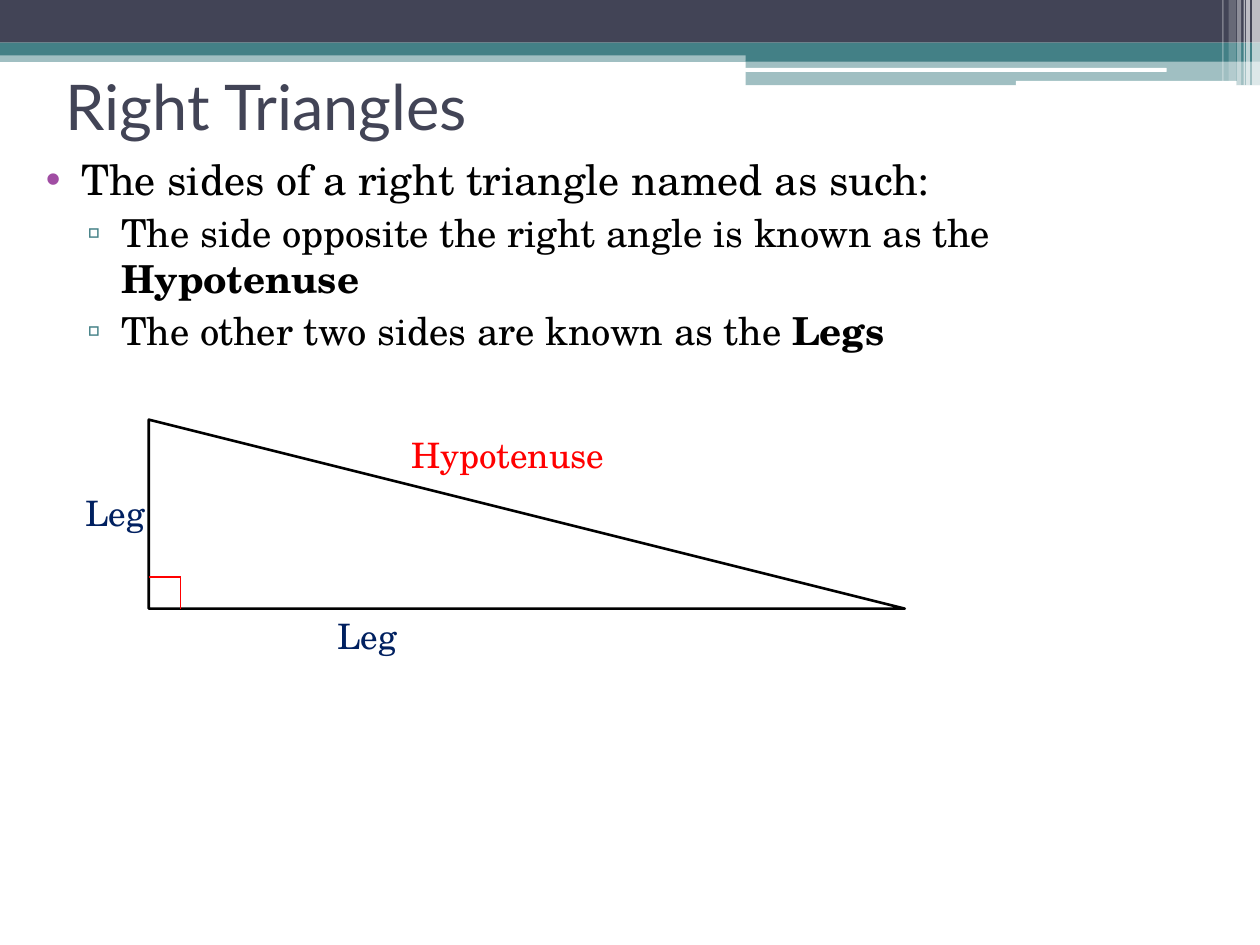
"""Build the Right Triangles slide: banded header, definitions and a labelled diagram."""
from dataclasses import dataclass

from lxml import etree
from pptx import Presentation
from pptx.dml.color import RGBColor
from pptx.enum.shapes import MSO_CONNECTOR, MSO_SHAPE
from pptx.enum.text import MSO_ANCHOR, MSO_AUTO_SIZE, PP_ALIGN
from pptx.oxml.ns import qn
from pptx.util import Cm, Pt

RECT = MSO_SHAPE.RECTANGLE
ROUNDED = MSO_SHAPE.ROUNDED_RECTANGLE
RIGHT_TRIANGLE = MSO_SHAPE.RIGHT_TRIANGLE
STRAIGHT = MSO_CONNECTOR.STRAIGHT
LEFT = PP_ALIGN.LEFT
MIDDLE, TOP = MSO_ANCHOR.MIDDLE, MSO_ANCHOR.TOP
NO_FIT, GROW = MSO_AUTO_SIZE.NONE, MSO_AUTO_SIZE.SHAPE_TO_FIT_TEXT

COLORS = {
    "slate": "424456", "teal": "438086", "white": "FFFFFF", "black": "000000",
    "purple": "A04DA3", "red": "FF0000", "navy": "002060",
}
TITLE_FONT, BODY_FONT = "Lato", "TeX Gyre Schola"


@dataclass
class Band:
    left: float
    top: float
    width: float
    height: float
    color: str
    opacity: int = 100
    preset: int = RECT


@dataclass
class Bullet:
    text: str
    bold_term: str
    level: int
    size: int
    margin: float
    indent: float
    mark: str
    mark_color: str


@dataclass
class Label:
    text: str
    left: float
    top: float
    width: float
    color: str


BANDS = [
    Band(0, 1.02, 25.4, 0.23, "teal", 50),
    Band(0, 0, 25.4, 0.86, "slate"),
    Band(0, 0.86, 25.4, 0.26, "teal"),
    Band(15.03, 0.99, 10.37, 0.25, "teal"),
    Band(15.03, 1.22, 10.37, 0.5, "teal", 50),
    Band(15.02, 1.37, 8.5, 0.08, "white", preset=ROUNDED),
    Band(20.48, 1.63, 4.45, 0.1, "white", preset=ROUNDED),
    Band(25.24, 0, 0.16, 1.73, "white", 65),
    Band(25.12, 0, 0.08, 1.73, "white", 65),
    Band(25.07, 0, 0.03, 1.73, "white", 60),
    Band(24.94, 0, 0.08, 1.73, "white", 40),
    Band(24.77, 0, 0.15, 1.63, "white", 20),
    Band(24.64, 0, 0.03, 1.63, "white", 30),
]
BULLETS = [
    Bullet("The sides of a right triangle named as such:", "", 0, 24, 1.02, -0.71, "•", "purple"),
    Bullet("The side opposite the right angle is known as the ", "Hypotenuse",
           1, 22, 1.83, -0.69, "▫", "teal"),
    Bullet("The other two sides are known as the ", "Legs",
           1, 22, 1.83, -0.69, "▫", "teal"),
]
LABELS = [
    Label("Hypotenuse", 8.05, 8.61, 5.92, "red"),
    Label("Leg", 6.55, 12.27, 2.54, "navy"),
    Label("Leg", 1.47, 9.78, 1.85, "navy"),
]
TRIANGLE_LEFT, TRIANGLE_TOP, BASE, HEIGHT = 3.0, 8.46, 15.24, 3.81
CORNER = 0.64


def rgb(color: str) -> RGBColor:
    return RGBColor.from_string(COLORS[color])


def place(item, left: float, top: float, width: float, height: float) -> None:
    item.left, item.top, item.width, item.height = Cm(left), Cm(top), Cm(width), Cm(height)


def style(run, font: str, size: int, color: str, bold: bool = False) -> None:
    run.font.name, run.font.size, run.font.bold = font, Pt(size), bold
    run.font.color.rgb = rgb(color)


def draw_band(slide, band: Band) -> None:
    bar = slide.shapes.add_shape(
        band.preset, Cm(band.left), Cm(band.top), Cm(band.width), Cm(band.height))
    bar.shadow.inherit = False
    bar.fill.solid()
    bar.fill.fore_color.rgb = rgb(band.color)
    bar.line.fill.background()
    if band.opacity < 100:
        tint = bar.element.spPr.find(f"{qn('a:solidFill')}/{qn('a:srgbClr')}")
        etree.SubElement(tint, qn("a:alpha"), val=str(band.opacity * 1000))


def write_title(slide) -> None:
    title = slide.shapes.title
    place(title, 1.07, 1.27, 13.64, 1.7)
    frame = title.text_frame
    frame.text = "Right Triangles"
    frame.auto_size, frame.vertical_anchor = NO_FIT, MIDDLE
    frame.paragraphs[0].alignment = LEFT
    style(frame.paragraphs[0].runs[0], TITLE_FONT, 36, "slate")


def write_bullet(paragraph, bullet: Bullet) -> None:
    paragraph.level = bullet.level
    paragraph.space_before = Pt(3)
    for text, bold in ((bullet.text, False), (bullet.bold_term, True)):
        if text:
            run = paragraph.add_run()
            run.text = text
            style(run, BODY_FONT, bullet.size, "black", bold)
    properties = paragraph._p.get_or_add_pPr()
    properties.set("marL", str(Cm(bullet.margin)))
    properties.set("indent", str(Cm(bullet.indent)))
    mark_color = etree.SubElement(properties, qn("a:buClr"))
    etree.SubElement(mark_color, qn("a:srgbClr"), val=COLORS[bullet.mark_color])
    etree.SubElement(properties, qn("a:buChar"), char=bullet.mark)


def write_body(slide) -> None:
    body = slide.placeholders[1]
    place(body, 0.36, 2.97, 24.64, 15.29)
    frame = body.text_frame
    frame.auto_size, frame.vertical_anchor = NO_FIT, TOP
    for index, bullet in enumerate(BULLETS):
        write_bullet(frame.add_paragraph() if index else frame.paragraphs[0], bullet)


def draw_triangle(slide) -> None:
    diagram = slide.shapes.add_group_shape()
    triangle = diagram.shapes.add_shape(
        RIGHT_TRIANGLE, Cm(TRIANGLE_LEFT), Cm(TRIANGLE_TOP), Cm(BASE), Cm(HEIGHT))
    triangle.shadow.inherit = False
    triangle.fill.solid()
    triangle.fill.fore_color.rgb = rgb("white")
    triangle.line.color.rgb = rgb("black")
    triangle.line.width = Pt(1.5)
    bottom = TRIANGLE_TOP + HEIGHT
    corner_right, corner_top = TRIANGLE_LEFT + CORNER, bottom - CORNER
    for start, end in (
        ((TRIANGLE_LEFT, corner_top), (corner_right, corner_top)),
        ((corner_right, corner_top), (corner_right, bottom)),
    ):
        edge = diagram.shapes.add_connector(STRAIGHT, *map(Cm, start + end))
        edge.line.color.rgb = rgb("red")
        edge.line.width = Pt(0.75)
        etree.SubElement(edge.element.spPr, qn("a:effectLst"))


def draw_label(slide, label: Label) -> None:
    box = slide.shapes.add_textbox(Cm(label.left), Cm(label.top), Cm(label.width), Cm(1.11))
    frame = box.text_frame
    frame.word_wrap, frame.auto_size = True, GROW
    frame.text = label.text
    style(frame.paragraphs[0].runs[0], BODY_FONT, 20, label.color)


def main() -> None:
    deck = Presentation()
    deck.slide_width, deck.slide_height = Cm(25.4), Cm(19.05)
    slide = deck.slides.add_slide(deck.slide_layouts[1])
    for band in BANDS:
        draw_band(slide, band)
    write_title(slide)
    write_body(slide)
    draw_triangle(slide)
    for label in LABELS:
        draw_label(slide, label)
    deck.save("out.pptx")


if __name__ == "__main__":
    main()
